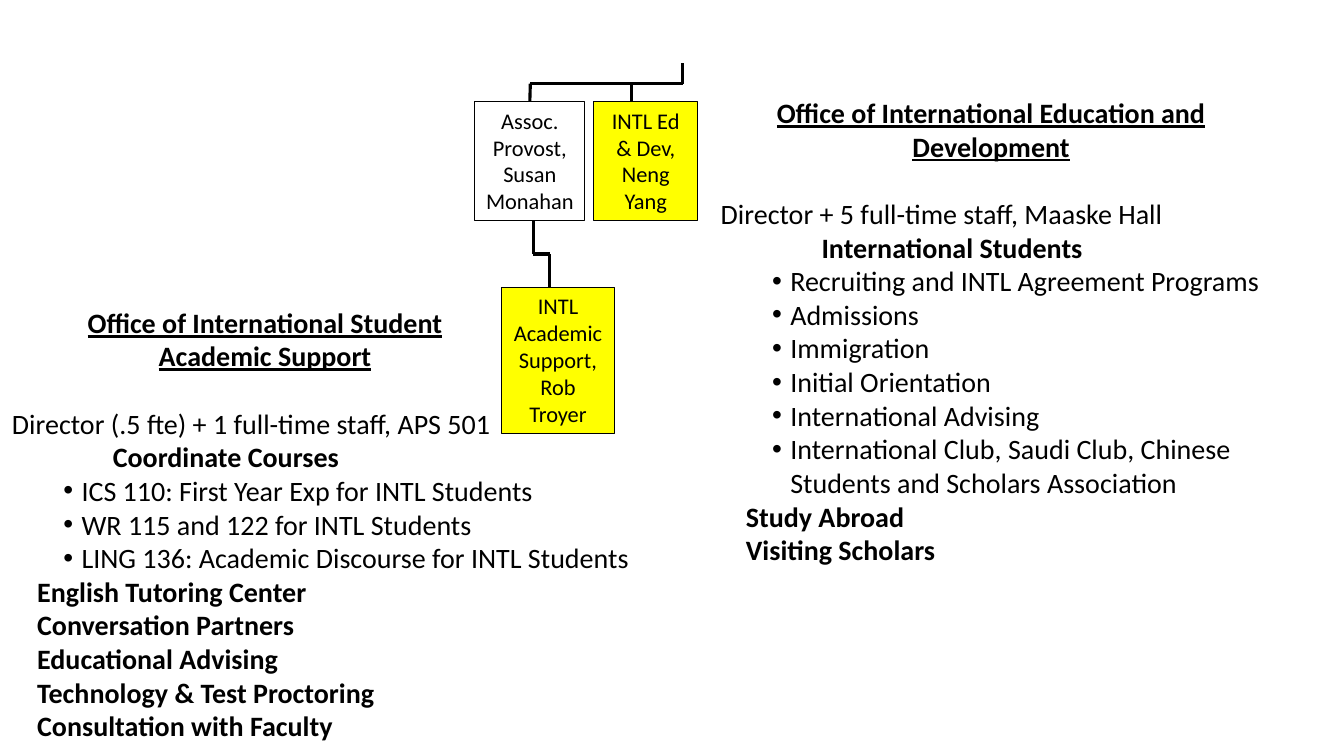
import pptx
import pptx.util
import pptx.dml.color
import pptx.enum.shapes
import pptx.enum.text
import pptx.oxml.ns
import lxml.etree

FONT = "Calibri"
COLORS = {"ink": "000000", "highlight": "FFFF00"}
SLIDE_SIZE = (13.33, 7.5)

BOXES = {
    "provost": ("Assoc. Provost, Susan Monahan", (4.71, 1.01, 1.09, 1.18), None),
    "development": ("INTL Ed & Dev, Neng Yang", (5.89, 1.01, 1.03, 1.18), "highlight"),
    "support": ("INTL Academic Support, Rob Troyer", (4.97, 2.85, 1.13, 1.45), "highlight"),
}

BUS, ELBOW = 0.83, 2.52
LINES = [
    ((6.77, 0.63), (6.77, BUS), None),
    ((5.26, BUS), (6.77, BUS), None),
    ((5.26, BUS), (5.26, 1.01), "provost"),
    ((6.26, BUS), (6.26, 1.01), None),
    ((5.29, 2.19), (5.29, ELBOW), None),
    ((5.45, ELBOW), (5.29, ELBOW), None),
    ((5.45, ELBOW), (5.45, 2.85), None),
]

OFFICES = [
    ((7.05, 0.9, 5.56, 4.81), [
        ("centered heading", "Office of International Education and Development"),
        ("staff", "Director + 5 full-time staff, Maaske Hall"),
        ("group", "International Students"),
        ("item", "Recruiting and INTL Agreement Programs"),
        ("item", "Admissions"),
        ("item", "Immigration"),
        ("item", "Initial Orientation"),
        ("item", "International Advising"),
        ("item", "International Club, Saudi Club, Chinese Students and Scholars Association"),
        ("service", "Study Abroad"),
        ("service", "Visiting Scholars"),
    ]),
    ((0.02, 2.98, 6.51, 4.48), [
        ("tabbed heading", "Office of International Student"),
        ("tabbed heading", "Academic Support"),
        ("staff", "Director (.5 fte) + 1 full-time staff, APS 501"),
        ("group", "Coordinate Courses"),
        ("item", "ICS 110: First Year Exp for INTL Students"),
        ("item", "WR 115 and 122 for INTL Students"),
        ("item", "LING 136: Academic Discourse for INTL Students"),
        ("service", "English Tutoring Center"),
        ("service", "Conversation Partners"),
        ("service", "Educational Advising"),
        ("service", "Technology & Test Proctoring"),
        ("service", "Consultation with Faculty"),
    ]),
]

INDENTS = {"group": 1.0, "item": 0.69, "service": 0.25}
HANGING = -0.18
HEADING_CENTER = 2.51


def inches(values):
    return [pptx.util.Inches(value) for value in values]


def color(name):
    return pptx.dml.color.RGBColor.from_string(COLORS[name])


def add_element(parent, tag, **attributes):
    element = lxml.etree.SubElement(parent, pptx.oxml.ns.qn(tag))
    for name, value in attributes.items():
        element.set(name, str(value))
    return element


def format_runs(paragraph, size, bold=False, underline=False):
    for run in paragraph.runs:
        run.font.name = FONT
        run.font.size = pptx.util.Pt(size)
        run.font.bold = bold
        run.font.underline = underline and run.text != "\t"
        run.font.color.rgb = color("ink")


def add_box(slide, text, place, fill):
    shape = slide.shapes.add_shape(pptx.enum.shapes.MSO_SHAPE.RECTANGLE, *inches(place))
    shape.shadow.inherit = False
    if fill:
        shape.fill.solid()
        shape.fill.fore_color.rgb = color(fill)
    else:
        shape.fill.background()
    shape.line.color.rgb = color("ink")
    shape.line.width = pptx.util.Pt(0.75)
    frame = shape.text_frame
    frame.text = text
    frame.word_wrap = True
    frame.vertical_anchor = pptx.enum.text.MSO_ANCHOR.TOP
    frame.paragraphs[0].alignment = pptx.enum.text.PP_ALIGN.CENTER
    format_runs(frame.paragraphs[0], 16)
    return shape


def add_line(slide, start, end, target):
    connector = slide.shapes.add_connector(
        pptx.enum.shapes.MSO_CONNECTOR.STRAIGHT, *inches(start + end))
    connector.line.color.rgb = color("ink")
    connector.line.width = pptx.util.Pt(2.25)
    add_element(connector._element.spPr, "a:effectLst")
    if target:
        connector.end_connect(target, 0)


def write_paragraph(paragraph, kind, text):
    heading = kind.endswith("heading")
    properties = paragraph._p.get_or_add_pPr()
    if kind == "tabbed heading":
        paragraph.text = "\t"
        tabs = add_element(properties, "a:tabLst")
        add_element(tabs, "a:tab", pos=pptx.util.Inches(HEADING_CENTER), algn="ctr")
    paragraph.add_run().text = text
    if kind == "centered heading":
        paragraph.alignment = pptx.enum.text.PP_ALIGN.CENTER
    if kind == "staff":
        paragraph.space_before = pptx.util.Pt(24)
    if kind in INDENTS:
        properties.set("marL", str(pptx.util.Inches(INDENTS[kind])))
    if kind == "item":
        paragraph.level = 1
        properties.set("indent", str(pptx.util.Inches(HANGING)))
        add_element(properties, "a:buFont", typeface="Arial")
        add_element(properties, "a:buChar", char="•")
    format_runs(paragraph, 20, heading or kind in ("group", "service"), heading)


def add_office(slide, place, entries):
    frame = slide.shapes.add_textbox(*inches(place)).text_frame
    frame.word_wrap = True
    for index, (kind, text) in enumerate(entries):
        paragraph = frame.add_paragraph() if index else frame.paragraphs[0]
        write_paragraph(paragraph, kind, text)


def main():
    presentation = pptx.Presentation()
    presentation.slide_width, presentation.slide_height = inches(SLIDE_SIZE)
    slide = presentation.slides.add_slide(presentation.slide_layouts[6])
    boxes = {name: add_box(slide, *box) for name, box in BOXES.items()}
    for start, end, target in LINES:
        add_line(slide, start, end, boxes.get(target))
    for place, entries in OFFICES:
        add_office(slide, place, entries)
    presentation.save("out.pptx")


if __name__ == "__main__":
    main()
